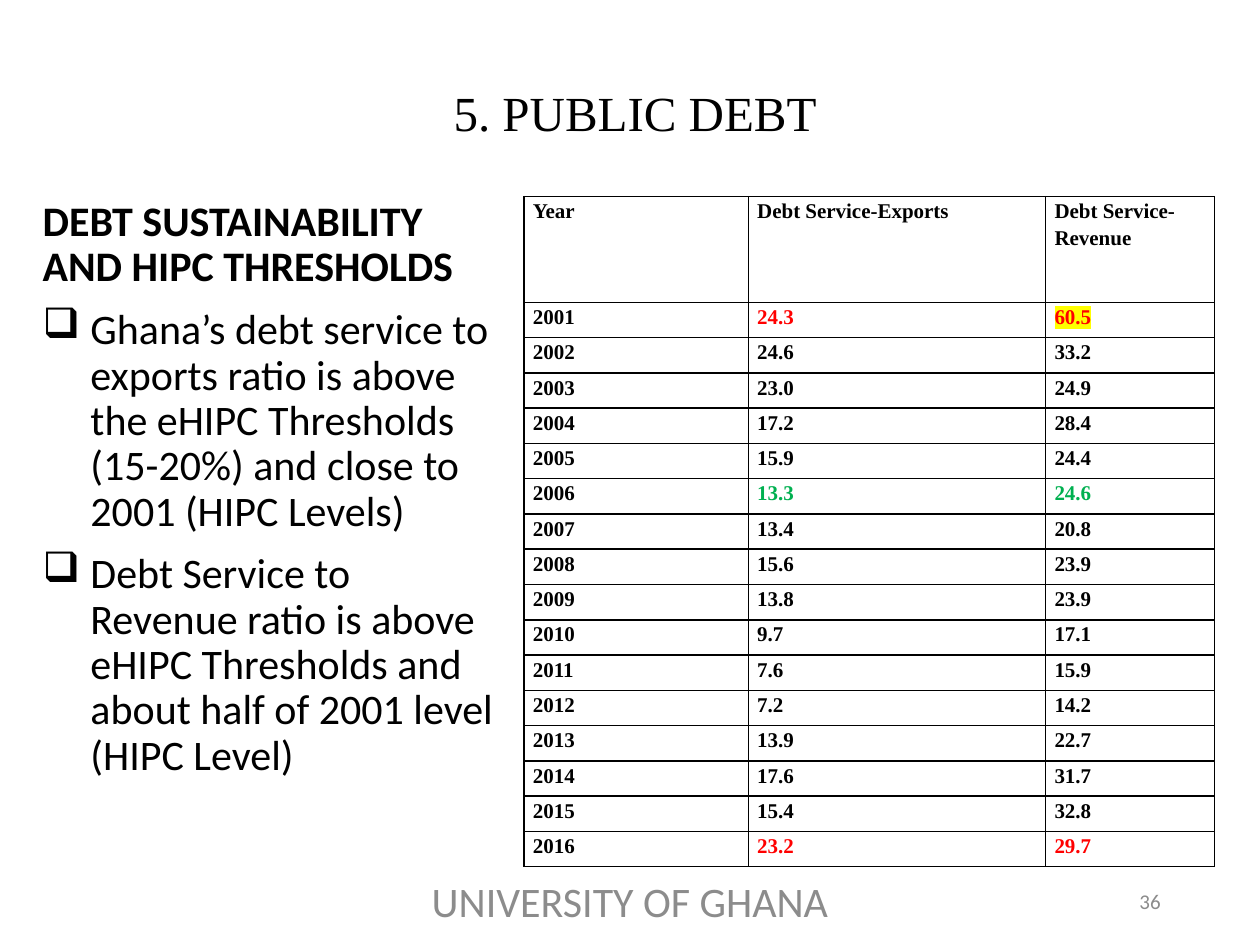
from lxml.etree import SubElement
from pptx import Presentation
from pptx.dml.color import RGBColor
from pptx.enum.text import MSO_ANCHOR, PP_ALIGN
from pptx.oxml import parse_xml
from pptx.oxml.ns import nsdecls, qn
from pptx.util import Inches, Pt

BLACK = RGBColor(0x00, 0x00, 0x00)
WHITE = RGBColor(0xFF, 0xFF, 0xFF)
RED = RGBColor(0xFF, 0x00, 0x00)
GREEN = RGBColor(0x00, 0xB0, 0x50)
YELLOW = RGBColor(0xFF, 0xFF, 0x00)
GRAY = RGBColor(0x8C, 0x8C, 0x8C)
SERIF = "Times New Roman"
SANS = "Calibri"
SLIDE_WIDTH = Inches(10)
SLIDE_HEIGHT = Inches(7.5)

HEADING = "DEBT SUSTAINABILITY AND HIPC THRESHOLDS"
BULLETS = [
    "Ghana’s debt service to exports ratio is above the eHIPC Thresholds (15-20%) and close to 2001 (HIPC Levels)",
    "Debt Service to Revenue ratio is above eHIPC Thresholds and about half of 2001 level (HIPC Level)",
]
HEADERS = ["Year", "Debt Service-Exports", "Debt Service-Revenue"]
FIRST_YEAR = 2001
EXPORTS = "24.3 24.6 23.0 17.2 15.9 13.3 13.4 15.6 13.8 9.7 7.6 7.2 13.9 17.6 15.4 23.2".split()
REVENUE = "60.5 33.2 24.9 28.4 24.4 24.6 20.8 23.9 23.9 17.1 15.9 14.2 22.7 31.7 32.8 29.7".split()
YEAR_COLORS = {"2001": RED, "2006": GREEN, "2016": RED}
COLUMN_PERCENTS = [17.8, 23.6, 13.4]
HEADER_UNITS = 3


def across(percent):
    return round(SLIDE_WIDTH * percent / 100)


def down(percent):
    return round(SLIDE_HEIGHT * percent / 100)


def area(left, top, width, height):
    return across(left), down(top), across(width), down(height)


def format_text(para, size, font, color=BLACK, bold=False):
    for span in para.runs:
        span.font.size = Pt(size)
        span.font.name = font
        span.font.bold = bold
        span.font.color.rgb = color


def set_title(page, text):
    title = page.shapes.title
    title.left, title.top, title.width, title.height = area(2.8, 3.2, 95.2, 12.53)
    title.text_frame.text = text
    title.text_frame.vertical_anchor = MSO_ANCHOR.BOTTOM
    para = title.text_frame.paragraphs[0]
    para.alignment = PP_ALIGN.CENTER
    para.line_spacing = 0.9
    format_text(para, 28, SERIF)


def add_bullet(para):
    properties = para._p.get_or_add_pPr()
    properties.set("marL", str(Inches(0.38)))
    properties.set("indent", str(-Inches(0.38)))
    SubElement(properties, qn("a:buChar")).set("char", "❑")


def add_body(page):
    box = page.shapes.add_textbox(*area(2.4, 20.53, 38.3, 77.07))
    frame = box.text_frame
    frame.word_wrap = True
    frame.text = "\n".join([HEADING] + BULLETS)
    for index, para in enumerate(frame.paragraphs):
        para.line_spacing = 0.9
        para.space_before = Pt(10)
        format_text(para, 24, SANS, bold=index == 0)
        if index > 0:
            add_bullet(para)


def add_borders(cell):
    properties = cell._tc.get_or_add_tcPr()
    for position, side in enumerate(["lnL", "lnR", "lnT", "lnB"]):
        properties.insert(position, parse_xml(
            f'<a:{side} {nsdecls("a")} w="{Pt(1)}"><a:solidFill>'
            f'<a:srgbClr val="{BLACK}"/></a:solidFill></a:{side}>'))


def highlight(span, color):
    fill = span._r.get_or_add_rPr().find(qn("a:solidFill"))
    fill.addnext(parse_xml(
        f'<a:highlight {nsdecls("a")}><a:srgbClr val="{color}"/></a:highlight>'))


def fill_cell(cell, text, color):
    cell.margin_left = cell.margin_right = Inches(0.07)
    cell.margin_top = cell.margin_bottom = 0
    cell.fill.solid()
    cell.fill.fore_color.rgb = WHITE
    add_borders(cell)
    cell.text_frame.text = text
    para = cell.text_frame.paragraphs[0]
    para.line_spacing = 1.15
    format_text(para, 12, SERIF, color, bold=True)


def add_debt_table(page):
    years = [str(FIRST_YEAR + offset) for offset in range(len(EXPORTS))]
    records = [HEADERS, *zip(years, EXPORTS, REVENUE)]
    place = area(41.6, 20.8, sum(COLUMN_PERCENTS), 70.93)
    table = page.shapes.add_table(len(records), len(HEADERS), *place).table
    for column, percent in zip(table.columns, COLUMN_PERCENTS):
        column.width = across(percent)
    unit = place[3] // (HEADER_UNITS + len(years))
    for row_index, record in enumerate(records):
        table.rows[row_index].height = unit * (HEADER_UNITS if row_index == 0 else 1)
        for column_index, text in enumerate(record):
            color = YEAR_COLORS.get(record[0], BLACK) if column_index else BLACK
            fill_cell(table.cell(row_index, column_index), text, color)
    highlight(table.cell(1, 2).text_frame.paragraphs[0].runs[0], YELLOW)


def add_footer(page, text, left, width, size, alignment):
    frame = page.shapes.add_textbox(*area(left, 92.67, width, 5.33)).text_frame
    frame.word_wrap = True
    frame.vertical_anchor = MSO_ANCHOR.MIDDLE
    frame.text = text
    para = frame.paragraphs[0]
    para.alignment = alignment
    format_text(para, size, SANS, GRAY)


def main():
    deck = Presentation()
    deck.slide_width = SLIDE_WIDTH
    deck.slide_height = SLIDE_HEIGHT
    page = deck.slides.add_slide(deck.slide_layouts[5])
    set_title(page, "5. PUBLIC DEBT")
    add_body(page)
    add_debt_table(page)
    add_footer(page, "UNIVERSITY OF GHANA", 33.1, 33.8, 24, PP_ALIGN.CENTER)
    add_footer(page, "36", 70.6, 22.5, 12, PP_ALIGN.RIGHT)
    deck.save("out.pptx")


if __name__ == "__main__":
    main()
